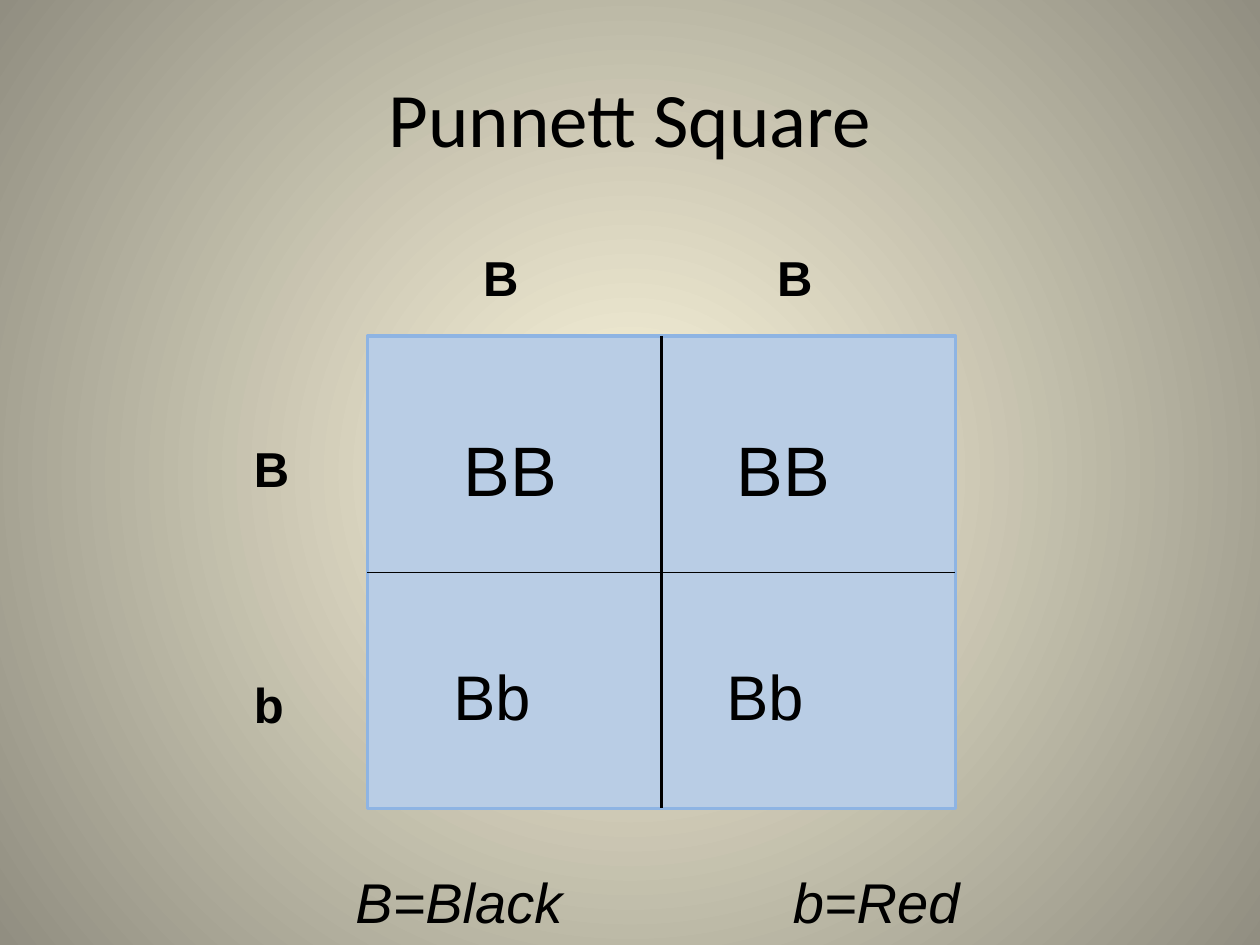
from lxml import etree
from pptx import Presentation
from pptx.dml.color import RGBColor
from pptx.enum.shapes import MSO_CONNECTOR, MSO_SHAPE
from pptx.enum.text import MSO_ANCHOR, PP_ALIGN
from pptx.oxml import parse_xml
from pptx.oxml.ns import nsdecls, qn
from pptx.util import Pt

COLORS = {
    "glow": "FCF7DD",
    "edge": "918E81",
    "square": "B9CDE5",
    "border": "8EB4E3",
    "ink": "000000",
}
COLUMN_ALLELES = ("B", "B")
ROW_ALLELES = ("B", "b")
LEGEND = (("B=Black", 0), ("b=Red", 250))


def color(name):
    return RGBColor.from_string(COLORS[name])


def write(frame, text, size, font="Arial", bold=False, italic=False, align=PP_ALIGN.LEFT):
    paragraph = frame.paragraphs[0]
    paragraph.alignment = align
    run = paragraph.add_run()
    run.text = text
    run.font.name = font
    run.font.size = Pt(size)
    run.font.bold = bold
    run.font.italic = italic
    run.font.color.rgb = color("ink")


def add_label(slide, text, left, top, width, height, **style):
    label = slide.shapes.add_textbox(Pt(left), Pt(top), Pt(width), Pt(height))
    label.text_frame.word_wrap = True
    write(label.text_frame, text, **style)


def add_divider(slide, x1, y1, x2, y2, weight):
    divider = slide.shapes.add_connector(
        MSO_CONNECTOR.STRAIGHT, Pt(x1), Pt(y1), Pt(x2), Pt(y2))
    divider.line.color.rgb = color("ink")
    divider.line.width = Pt(weight)
    etree.SubElement(divider._element.spPr, qn("a:effectLst"))


def paint_background(slide):
    fill = slide.background.fill
    fill.gradient()
    for stop, name, position in zip(fill.gradient_stops, ("glow", "edge"), (0, 1)):
        stop.color.rgb = color(name)
        stop.position = position
    linear = slide._element.find(".//" + qn("a:lin"))
    radial = parse_xml(
        f'<a:path {nsdecls("a")} path="circle">'
        '<a:fillToRect l="50000" t="50000" r="50000" b="50000"/></a:path>')
    linear.getparent().replace(linear, radial)


def place_title(slide, left, top, width, height):
    title = slide.shapes.title
    title.left, title.top = Pt(left), Pt(top)
    title.width, title.height = Pt(width), Pt(height)
    title.text_frame.vertical_anchor = MSO_ANCHOR.MIDDLE
    write(title.text_frame, "Punnett Square", size=44, font="Calibri", align=PP_ALIGN.CENTER)


def draw_punnett_square(slide, left, top, width, height):
    column_width, row_height = width / 2, height / 2
    square = slide.shapes.add_shape(
        MSO_SHAPE.RECTANGLE, Pt(left), Pt(top), Pt(width), Pt(height))
    square.shadow.inherit = False
    square.fill.solid()
    square.fill.fore_color.rgb = color("square")
    square.line.color.rgb = color("border")
    square.line.width = Pt(2)

    middle_x, middle_y = left + column_width, top + row_height
    add_divider(slide, middle_x, top, middle_x, top + height, 1.75)
    add_divider(slide, left, middle_y, left + width, middle_y, 0.75)

    for column, allele in enumerate(COLUMN_ALLELES):
        add_label(slide, allele, left + 59 + column * column_width, top - 54, 54, 41,
                  size=28, bold=True)
    for row, allele in enumerate(ROW_ALLELES):
        add_label(slide, allele, left - 72, top + 55 + row * row_height, 54, 41,
                  size=28, bold=True)

    genotype_rows = ((48, 48, 40), (42, 180, 36))
    for row_allele, (indent, drop, size) in zip(ROW_ALLELES, genotype_rows):
        for column, column_allele in enumerate(COLUMN_ALLELES):
            add_label(slide, column_allele + row_allele,
                      left + indent + column * 156, top + drop, 102, size * 1.4, size=size)


def add_legend(slide, left, top, width, height):
    for entry, offset in LEGEND:
        add_label(slide, entry, left + offset, top, width / 2, height, size=32, italic=True)


def main():
    presentation = Presentation()
    presentation.slide_width, presentation.slide_height = Pt(720), Pt(540)
    slide = presentation.slides.add_slide(presentation.slide_layouts[5])
    paint_background(slide)
    place_title(slide, 36, 21.6, 648, 90)
    draw_punnett_square(slide, 210, 192, 336, 270)
    add_legend(slide, 196, 492, 400, 46)
    presentation.save("out.pptx")


if __name__ == "__main__":
    main()
